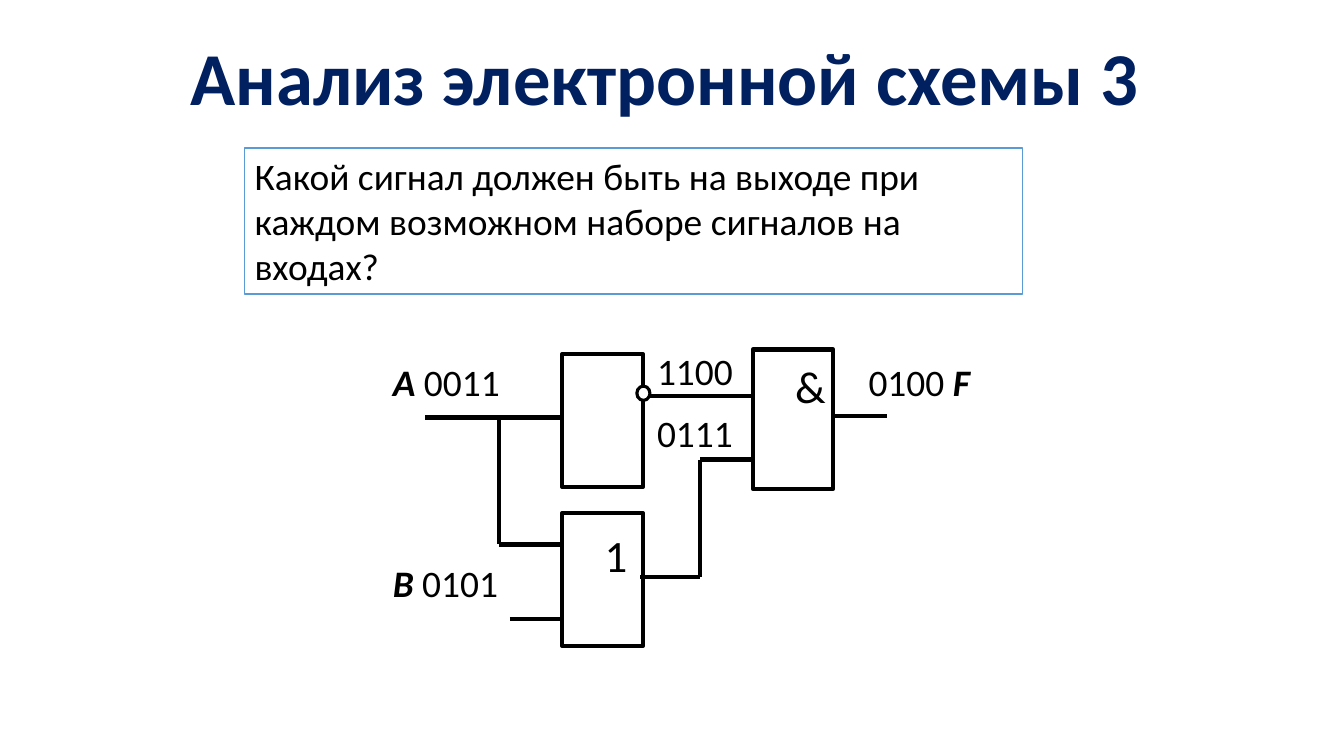
from dataclasses import dataclass

from lxml import etree
from pptx import Presentation
from pptx.dml.color import RGBColor
from pptx.enum.shapes import MSO_CONNECTOR, MSO_SHAPE
from pptx.enum.text import MSO_ANCHOR, PP_ALIGN
from pptx.oxml.ns import qn
from pptx.util import Cm, Pt

RECT = MSO_SHAPE.RECTANGLE
OVAL = MSO_SHAPE.OVAL
STRAIGHT = MSO_CONNECTOR.STRAIGHT
CENTER = PP_ALIGN.CENTER
LEFT = PP_ALIGN.LEFT
MIDDLE = MSO_ANCHOR.MIDDLE
TOP = MSO_ANCHOR.TOP


@dataclass(frozen=True)
class Theme:
    """Colours, font, type sizes and line widths of the slide."""
    font: str = "Calibri"
    ink: RGBColor = RGBColor(0, 0, 0)
    paper: RGBColor = RGBColor(255, 255, 255)
    title: RGBColor = RGBColor(0x00, 0x20, 0x60)
    frame: RGBColor = RGBColor(0x5B, 0x9B, 0xD5)
    title_size: Pt = Pt(53.3)
    body_size: Pt = Pt(26.7)
    symbol_size: Pt = Pt(32)
    wire: Pt = Pt(3)
    bubble: Pt = Pt(2.25)
    thin: Pt = Pt(0.75)


T = Theme()
GATE_WIDTH = 2.03


def style(p, size, color=T.ink, bold=None):
    """Set the font of a whole paragraph."""
    p.font.name, p.font.size, p.font.bold = T.font, size, bold
    p.font.color.rgb = color


def add_title(s, text):
    """Place and format the title placeholder."""
    sp = s.shapes.title
    sp.left, sp.top, sp.width, sp.height = Cm(1.73), Cm(0.46), Cm(30.48), Cm(3.18)
    tf = sp.text_frame
    tf.text = text
    tf.vertical_anchor = MIDDLE
    p = tf.paragraphs[0]
    p.alignment, p.line_spacing = CENTER, 0.9
    style(p, T.title_size, T.title, True)


def add_box(s, kind, x, y, w, h, line, width, fill=None):
    """Draw an outlined preset shape."""
    sp = s.shapes.add_shape(kind, Cm(x), Cm(y), Cm(w), Cm(h))
    sp.shadow.inherit = False
    sp.line.color.rgb, sp.line.width = line, width
    if fill is None:
        sp.fill.background()
    else:
        sp.fill.solid()
        sp.fill.fore_color.rgb = fill
    return sp


def add_question(s, text):
    """Add the framed question."""
    sp = add_box(s, RECT, 6.17, 3.73, 19.61, 3.68, T.frame, T.thin)
    tf = sp.text_frame
    tf.text = text
    tf.word_wrap, tf.vertical_anchor = True, TOP
    p = tf.paragraphs[0]
    p.alignment = LEFT
    style(p, T.body_size)


def add_wire(s, *points):
    """Draw straight segments through the points."""
    for (x1, y1), (x2, y2) in zip(points, points[1:]):
        c = s.shapes.add_connector(STRAIGHT, Cm(x1), Cm(y1), Cm(x2), Cm(y2))
        c.line.color.rgb, c.line.width = T.ink, T.wire
        etree.SubElement(c._element.spPr, qn("a:effectLst"))


def add_label(s, x, y, w, h, size, *parts):
    """Add a label; parts that are letters are variables in bold italics."""
    tf = s.shapes.add_textbox(Cm(x), Cm(y), Cm(w), Cm(h)).text_frame
    tf.word_wrap = True
    p = tf.paragraphs[0]
    style(p, size)
    for part in parts:
        r = p.add_run()
        r.text = part
        if part.isalpha():
            r.font.bold = r.font.italic = True


def main():
    """Build the slide and save it."""
    prs = Presentation()
    prs.slide_width, prs.slide_height = Cm(33.87), Cm(19.05)
    s = prs.slides.add_slide(prs.slide_layouts[5])
    add_title(s, "Анализ электронной схемы 3 ")
    add_question(s, "Какой сигнал должен быть на выходе при каждом "
                    "возможном наборе сигналов на входах?")

    for x, y, h in ((14.17, 8.92, 3.35), (14.17, 12.93, 3.35), (18.97, 8.81, 3.51)):
        add_box(s, RECT, x, y, GATE_WIDTH, h, T.ink, T.wire)

    add_wire(s, (10.72, 10.52), (14.2, 10.52))
    add_wire(s, (12.57, 10.52), (12.57, 13.72), (14.17, 13.72))
    add_wire(s, (12.85, 15.6), (14.2, 15.6))
    add_wire(s, (16.31, 9.98), (19, 9.98))
    add_wire(s, (16.13, 14.53), (17.65, 14.53), (17.65, 11.58), (18.97, 11.58))
    add_wire(s, (21.01, 10.49), (22.35, 10.49))
    add_box(s, OVAL, 16.05, 9.73, 0.33, 0.36, T.ink, T.bubble, T.paper)

    for x, y, w, *parts in (
        (9.65, 8.92, 3.91, "А", " 0011"),
        (9.65, 14, 3.91, "В", " 0101"),
        (16.31, 8.66, 3.38, "1100"),
        (16.31, 10.21, 3, "0111"),
        (21.64, 8.92, 3.48, "0100 ", "F"),
    ):
        add_label(s, x, y, w, 1.4, T.body_size, *parts)
    for x, y, symbol in ((19.79, 8.92, "&"), (14.99, 13.18, "1")):
        add_label(s, x, y, 0.84, 1.63, T.symbol_size, symbol)
    prs.save("out.pptx")


if __name__ == "__main__":
    main()
